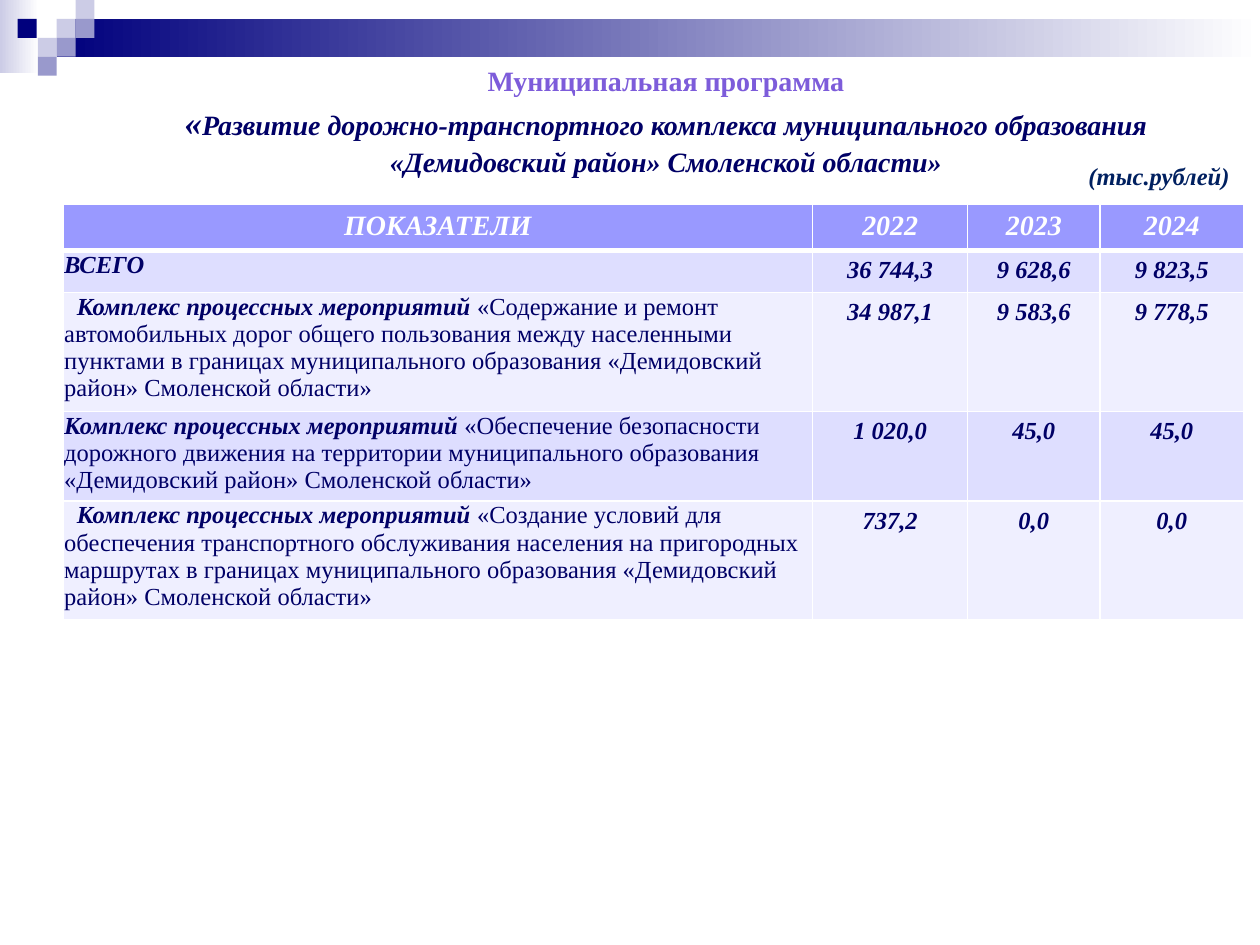
from lxml.etree import SubElement
from pptx import Presentation
from pptx.dml.color import RGBColor
from pptx.enum.shapes import MSO_SHAPE
from pptx.enum.text import PP_ALIGN
from pptx.oxml.ns import qn
from pptx.util import Inches, Pt

FONT = "Times New Roman"
WHITE = RGBColor(0xFF, 0xFF, 0xFF)
NAVY = RGBColor(0x00, 0x00, 0x7D)
LILAC = RGBColor(0xCC, 0xCC, 0xE6)
VIOLET = RGBColor(0x99, 0x99, 0xCC)
INK = RGBColor(0x00, 0x00, 0x66)
TITLE = RGBColor(0x7D, 0x5C, 0xDA)
UNIT = RGBColor(0x00, 0x20, 0x60)
HEAD_FILL = RGBColor(0x99, 0x99, 0xFF)
BANDS = (RGBColor(0xDE, 0xDE, 0xFF), RGBColor(0xEF, 0xEF, 0xFF))

PROGRAM = "Муниципальная программа"
PROGRAM_NAME = ("Развитие дорожно-транспортного комплекса муниципального образования "
                "«Демидовский район» Смоленской области»")
UNITS = "(тыс.рублей)"
HEADER = ("ПОКАЗАТЕЛИ", "2022", "2023", "2024")
COMPLEX = "Комплекс процессных мероприятий "
# bold label, plain description, first-line indent, values by year
ROWS = (
    ("ВСЕГО", "", 0, ("36 744,3", "9 628,6", "9 823,5")),
    (COMPLEX, "«Содержание и ремонт автомобильных дорог общего пользования между "
     "населенными пунктами в границах муниципального образования "
     "«Демидовский район» Смоленской области»", 0.1,
     ("34 987,1", "9 583,6", "9 778,5")),
    (COMPLEX, "«Обеспечение безопасности дорожного движения на территории "
     "муниципального образования «Демидовский район» Смоленской области»", 0,
     ("1 020,0", "45,0", "45,0")),
    (COMPLEX, "«Создание условий для обеспечения транспортного обслуживания населения "
     "на пригородных маршрутах в границах муниципального образования "
     "«Демидовский район» Смоленской области»", 0.1,
     ("737,2", "0,0", "0,0")),
)
COL_WIDTHS = (5.95, 1.23, 1.05, 1.14)
ROW_HEIGHTS = (0.36, 0.33, 0.94, 0.71, 0.94)

GRADIENT_BARS = (((0, 0, 0.31, 0.58), LILAC), ((0.45, 0.15, 9.55, 0.3), NAVY))
SQUARE = 0.15
SQUARES = ((0.45, 0.15, LILAC), (0.6, 0, LILAC), (0.6, 0.15, VIOLET),
           (0.3, 0.3, LILAC), (0.14, 0.15, NAVY), (0.45, 0.3, VIOLET),
           (0.3, 0.45, VIOLET))


def add_rect(slide, box):
    s = slide.shapes.add_shape(MSO_SHAPE.RECTANGLE, *map(Inches, box))
    s.shadow.inherit = False
    s.line.fill.background()
    return s


def add_run(p, text, size, color, bold=True, italic=True):
    r = p.add_run()
    r.text = text
    r.font.name = FONT
    r.font.size = Pt(size)
    r.font.bold = bold
    r.font.italic = italic
    r.font.color.rgb = color


def style_cell(cell, fill, bottom=1):
    """Set the fill and the white borders; bottom is the lower border in points."""
    tc_pr = cell._tc.get_or_add_tcPr()
    for side, width in (("L", 1), ("R", 1), ("T", 1), ("B", bottom)):
        ln = SubElement(tc_pr, qn(f"a:ln{side}"), w=str(Pt(width)))
        solid = SubElement(ln, qn("a:solidFill"))
        SubElement(solid, qn("a:srgbClr"), val=str(WHITE))
    cell.fill.solid()
    cell.fill.fore_color.rgb = fill


def add_decoration(slide):
    for box, color in GRADIENT_BARS:
        fill = add_rect(slide, box).fill
        fill.gradient()
        fill.gradient_angle = 0
        for stop, stop_color, position in zip(fill.gradient_stops, (color, WHITE), (0, 1)):
            stop.color.rgb = stop_color
            stop.position = position
    for x, y, color in SQUARES:
        fill = add_rect(slide, (x, y, SQUARE, SQUARE)).fill
        fill.solid()
        fill.fore_color.rgb = color


def add_title(slide):
    tf = slide.shapes.add_textbox(*map(Inches, (0.99, 0.44, 8.59, 0.98))).text_frame
    tf.word_wrap = True
    program, name = tf.paragraphs[0], tf.add_paragraph()
    for p in (program, name):
        p.alignment = PP_ALIGN.CENTER
        p.line_spacing = 1.07
    add_run(program, PROGRAM, 16, TITLE, italic=False)
    add_run(name, "«", 20, INK)
    add_run(name, PROGRAM_NAME, 16, INK)


def add_budget_table(slide):
    table = slide.shapes.add_table(
        len(ROWS) + 1, len(HEADER), Inches(0.5), Inches(1.62),
        Inches(sum(COL_WIDTHS)), Inches(sum(ROW_HEIGHTS))).table
    for col, width in zip(table.columns, COL_WIDTHS):
        col.width = Inches(width)
    for row, height in zip(table.rows, ROW_HEIGHTS):
        row.height = Inches(height)

    def add_centred(cell, text, size, color):
        p = cell.text_frame.paragraphs[0]
        p.alignment = PP_ALIGN.CENTER
        add_run(p, text, size, color)

    for c, text in enumerate(HEADER):
        cell = table.cell(0, c)
        style_cell(cell, HEAD_FILL, bottom=3)
        add_centred(cell, text, 16, WHITE)
    for i, (label, description, indent, values) in enumerate(ROWS):
        cells = table.rows[i + 1].cells
        for cell in cells:
            style_cell(cell, BANDS[i % 2])
        first = table.cell(i + 1, 0)
        first.margin_left = first.margin_right = first.margin_top = Inches(0.01)
        first.margin_bottom = 0
        p = first.text_frame.paragraphs[0]
        p._p.get_or_add_pPr().set("indent", str(Inches(indent)))
        add_run(p, label, 14, INK)
        if description:
            add_run(p, description, 14, INK, bold=False, italic=False)
        for c, value in enumerate(values, 1):
            add_centred(table.cell(i + 1, c), value, 14, INK)


def main():
    prs = Presentation()
    prs.slide_width, prs.slide_height = Inches(10), Inches(7.5)
    slide = prs.slides.add_slide(prs.slide_layouts[6])
    add_decoration(slide)
    add_title(slide)
    add_budget_table(slide)
    tf = slide.shapes.add_textbox(*map(Inches, (8.54, 1.23, 1.33, 0.34))).text_frame
    tf.word_wrap = False
    add_run(tf.paragraphs[0], UNITS, 14, UNIT)
    prs.save("out.pptx")


if __name__ == "__main__":
    main()
